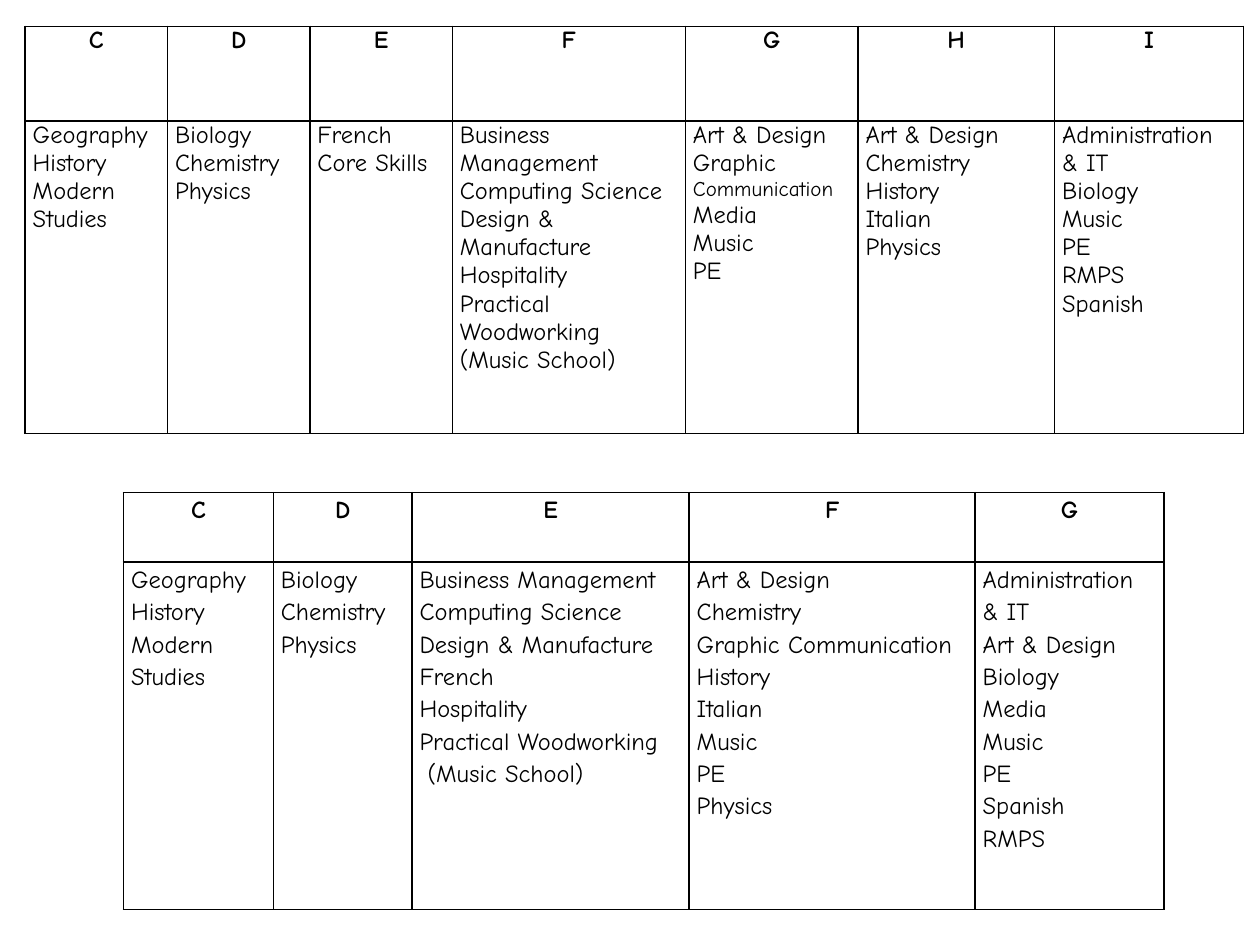
from lxml import etree
from pptx import Presentation
from pptx.dml.color import RGBColor
from pptx.enum import text
from pptx.oxml import ns
from pptx.util import Inches, Pt

FONT = "Comic Neue"
BLACK = "000000"
BODY_SIZE = 14

SEVEN_COLUMNS = [
    ("C", 1.13, ["Geography", "History", "Modern Studies"]),
    ("D", 1.13, ["Biology", "Chemistry", "Physics"]),
    ("E", 1.13, ["French", "Core Skills"]),
    ("F", 1.85, ["Business Management", "Computing Science", "Design & Manufacture",
                 "Hospitality", "Practical Woodworking", "(Music School)"]),
    ("G", 1.37, ["Art & Design", [("Graphic ", BODY_SIZE), ("Communication", 12)],
                 "Media", "Music", "PE"]),
    ("H", 1.56, ["Art & Design", "Chemistry", "History", "Italian", "Physics"]),
    ("I", 1.5, ["Administration & IT", "Biology", "Music", "PE", "RMPS", "Spanish"]),
]
FIVE_COLUMNS = [
    ("C", 1.19, ["Geography", "History", "Modern Studies"]),
    ("D", 1.1, ["Biology", "Chemistry", "Physics"]),
    ("E", 2.2, ["Business Management", "Computing Science", "Design & Manufacture",
                "French", "Hospitality", "Practical Woodworking", " (Music School)"]),
    ("F", 2.27, ["Art & Design", "Chemistry", "Graphic Communication", "History",
                 "Italian", "Music", "PE", "Physics"]),
    ("G", 1.5, ["Administration & IT", "Art & Design", "Biology", "Media", "Music",
                "PE", "Spanish", "RMPS"]),
]


def color(value):
    return RGBColor.from_string(value)


def write_lines(frame, lines, bold=False, align=text.PP_ALIGN.LEFT, spacing=1.0):
    for index, line in enumerate(lines):
        paragraph = frame.add_paragraph() if index else frame.paragraphs[0]
        paragraph.alignment = align
        paragraph.line_spacing = spacing
        pieces = [(line, BODY_SIZE)] if isinstance(line, str) else line
        for wording, size in pieces:
            run = paragraph.add_run()
            run.text = wording
            run.font.name = FONT
            run.font.size = Pt(size)
            run.font.bold = bold
            run.font.color.rgb = color(BLACK)


def add_borders(cell, line_color, width):
    properties = cell._tc.get_or_add_tcPr()
    for side in ("lnL", "lnR", "lnT", "lnB"):
        border = etree.SubElement(properties, ns.qn(f"a:{side}"), w=str(Pt(width)))
        fill = etree.SubElement(border, ns.qn("a:solidFill"))
        etree.SubElement(fill, ns.qn("a:srgbClr"), val=line_color)


def style_cell(cell):
    cell.margin_left = cell.margin_right = Inches(0.06)
    cell.margin_top = cell.margin_bottom = 0
    add_borders(cell, BLACK, 1)
    cell.fill.background()


def add_subject_table(slide, columns, left, top, row_heights, spacing=1.0):
    width = sum(column_width for _, column_width, _ in columns)
    table = slide.shapes.add_table(
        len(row_heights), len(columns), Inches(left), Inches(top),
        Inches(width), Inches(sum(row_heights))).table
    table.first_row = table.horz_banding = False
    for row, height in zip(table.rows, row_heights):
        row.height = Inches(height)
    for index, (letter, column_width, subjects) in enumerate(columns):
        table.columns[index].width = Inches(column_width)
        heading, body = table.cell(0, index), table.cell(1, index)
        style_cell(heading)
        style_cell(body)
        write_lines(heading.text_frame, [letter], bold=True,
                    align=text.PP_ALIGN.CENTER, spacing=spacing)
        write_lines(body.text_frame, subjects, spacing=spacing)


def main():
    deck = Presentation()
    deck.slide_width, deck.slide_height = Inches(10), Inches(7.5)
    slide = deck.slides.add_slide(deck.slide_layouts[6])
    add_subject_table(slide, FIVE_COLUMNS, 0.98, 3.91, (0.55, 2.76), spacing=1.15)
    add_subject_table(slide, SEVEN_COLUMNS, 0.2, 0.21, (0.75, 2.48))
    deck.save("out.pptx")


if __name__ == "__main__":
    main()
